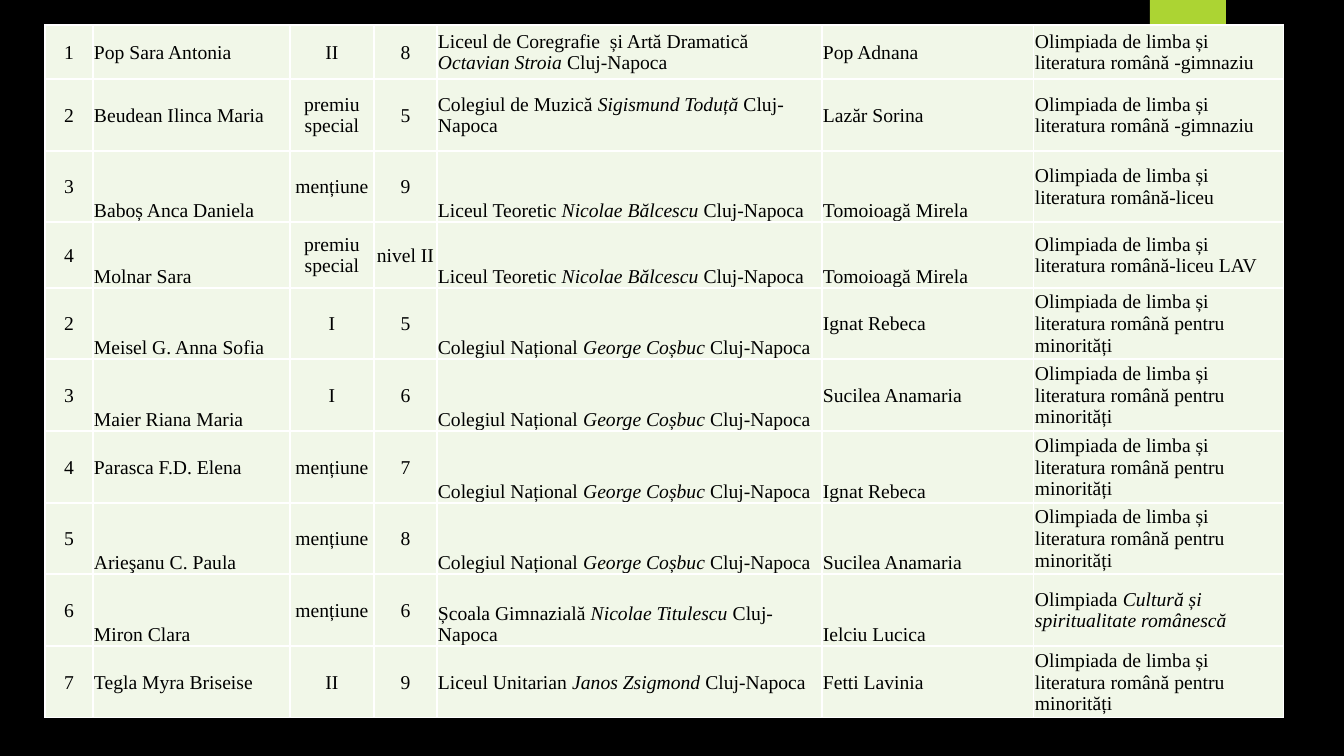
import pptx
import pptx.dml.color
import pptx.enum.shapes
import pptx.enum.text
import pptx.oxml
import pptx.oxml.ns
import pptx.util

PX = 914400 / 100.8
ALIGN = pptx.enum.text.PP_ALIGN
ANCHOR = pptx.enum.text.MSO_ANCHOR

WIDTHS = [48, 197, 84, 63, 385, 212, 250]
HEIGHTS = [54, 72, 71, 66, 71, 72, 72, 71, 72, 72]
CENTRED = (0, 2, 3)

BASE = "Olimpiada de limba și literatura română"
MINOR = BASE + " pentru minorități"
LYCEE = "Liceul Teoretic *Nicolae Bălcescu *Cluj-Napoca"
COLLEGE = "Colegiul Național *George Coșbuc *Cluj-Napoca"

# Each row: its cells (italics between asterisks), then the columns set at the bottom
ROWS = [
    (["1", "Pop Sara Antonia", "II", "8",
      "Liceul de Coregrafie  și Artă Dramatică *Octavian Stroia* Cluj-Napoca",
      "Pop Adnana", BASE + " -gimnaziu"], ()),
    (["2", "Beudean Ilinca Maria", "premiu special", "5",
      "Colegiul de Muzică *Sigismund Toduță* Cluj-Napoca",
      "Lazăr Sorina", BASE + " -gimnaziu"], ()),
    (["3", "Baboș Anca Daniela", "mențiune", "9", LYCEE,
      "Tomoioagă Mirela", BASE + "-liceu"], (1, 4, 5)),
    (["4", "Molnar Sara", "premiu special", "nivel II", LYCEE,
      "Tomoioagă Mirela", BASE + "-liceu LAV"], (1, 4, 5)),
    (["2", "Meisel G. Anna Sofia", "I", "5", COLLEGE,
      "Ignat Rebeca", MINOR], (1, 4)),
    (["3", "Maier Riana Maria", "I", "6", COLLEGE,
      "Sucilea Anamaria", MINOR], (1, 4)),
    (["4", "Parasca F.D. Elena", "mențiune", "7", COLLEGE,
      "Ignat Rebeca", MINOR], (4, 5)),
    (["5", "Arieşanu C. Paula", "mențiune", "8", COLLEGE,
      "Sucilea Anamaria", MINOR], (1, 4, 5)),
    (["6", "Miron Clara", "mențiune", "6",
      "Școala Gimnazială *Nicolae Titulescu *Cluj-Napoca",
      "Ielciu Lucica", "Olimpiada *Cultură și spiritualitate românescă*"], (1, 4, 5)),
    (["7", "Tegla Myra Briseise", "II", "9",
      "Liceul Unitarian *Janos Zsigmond* Cluj-Napoca",
      "Fetti Lavinia", MINOR], ()),
]


def px(num):
    return pptx.util.Emu(round(num * PX))


def paint(fill, tone):
    fill.solid()
    fill.fore_color.rgb = pptx.dml.color.RGBColor.from_string(tone)


def style(item, form):
    for key, value in form.items():
        setattr(item, key, value)


def edge(cell, tone):
    """Rule all four sides of a cell; borders come before the fill."""
    props = cell._tc.get_or_add_tcPr()
    for spot, side in enumerate(("lnL", "lnR", "lnT", "lnB")):
        props.insert(spot, pptx.oxml.parse_xml(
            f'<a:{side} {pptx.oxml.ns.nsdecls("a")} w="12700"><a:solidFill>'
            f'<a:srgbClr val="{tone}"/></a:solidFill></a:{side}>'))


def write(cell, text, align):
    para = cell.text_frame.paragraphs[0]
    para.alignment = align
    for spot, part in enumerate(text.split("*")):
        if part:
            run = para.add_run()
            run.text = part
            style(run.font, {"name": "Times New Roman", "size": pptx.util.Pt(14),
                             "bold": False, "italic": spot % 2 == 1})
            paint(run.font.fill, "000000")


def add_tab(slide, box):
    """Green tab at the top edge."""
    tab = slide.shapes.add_shape(pptx.enum.shapes.MSO_SHAPE.RECTANGLE, *map(px, box))
    tab.shadow.inherit = False
    paint(tab.fill, "ACD433")
    tab.line.fill.background()


def add_grid(slide, box):
    """Table of prizes, scaled to its box."""
    left, top, width, height = box
    frame = slide.shapes.add_table(len(HEIGHTS), len(WIDTHS), *map(px, box))
    grid = frame.table
    style(grid, {"first_row": False, "horz_banding": False})
    for col, size in zip(grid.columns, WIDTHS):
        col.width = px(size * width / sum(WIDTHS))
    for row, size in zip(grid.rows, HEIGHTS):
        row.height = px(size * height / sum(HEIGHTS))
    for r, (texts, low) in enumerate(ROWS):
        for c, text in enumerate(texts):
            cell = grid.cell(r, c)
            style(cell, {"margin_left": px(1), "margin_right": px(1),
                         "margin_top": px(1), "margin_bottom": 0,
                         "vertical_anchor": ANCHOR.BOTTOM if c in low else ANCHOR.MIDDLE})
            paint(cell.fill, "F1F7E8")
            edge(cell, "FFFFFF")
            write(cell, text, ALIGN.CENTER if c in CENTRED else ALIGN.LEFT)


def main():
    deck = pptx.Presentation()
    style(deck, {"slide_width": px(1344), "slide_height": px(756)})
    slide = deck.slides.add_slide(deck.slide_layouts[6])
    paint(slide.background.fill, "000000")
    add_tab(slide, (1150, 0, 76, 126))
    add_grid(slide, (45, 25, 1239, 693))
    deck.save("out.pptx")


if __name__ == "__main__":
    main()
